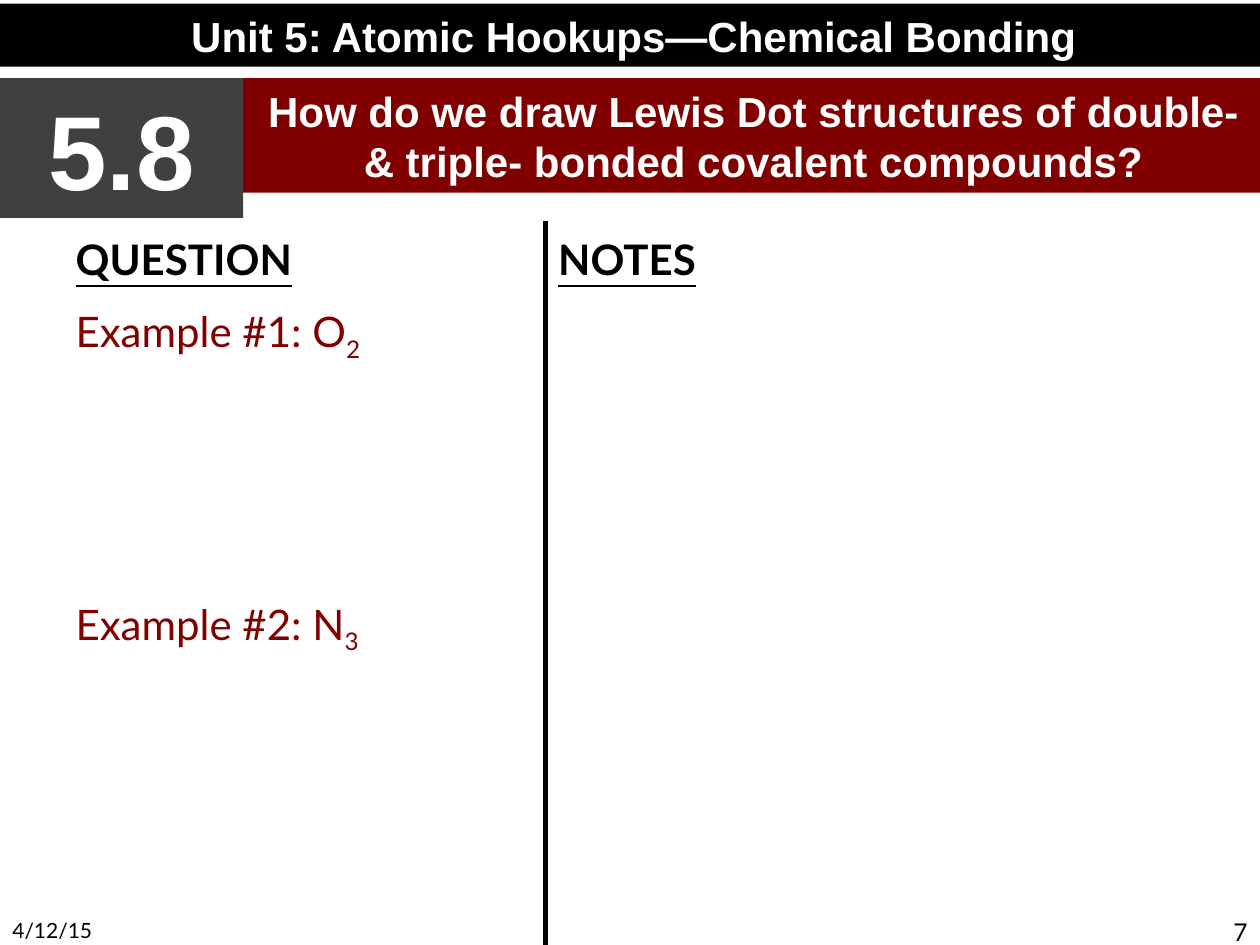
from dataclasses import dataclass

from lxml import etree
from pptx import Presentation
from pptx import util as u
from pptx.dml.color import RGBColor
from pptx.enum import shapes, text
from pptx.oxml.ns import qn


@dataclass(frozen=True)
class Theme:
    black: RGBColor = RGBColor(0x00, 0x00, 0x00)
    white: RGBColor = RGBColor(0xFF, 0xFF, 0xFF)
    gray: RGBColor = RGBColor(0x40, 0x40, 0x40)
    maroon: RGBColor = RGBColor(0x80, 0x00, 0x00)
    heading_font: str = "Arial"
    body_font: str = "Lato"
    number_size: int = 60
    main_size: int = 24
    page_size: int = 14
    date_size: int = 12


theme = Theme()


def add_run(paragraph, words, size, color, font=theme.body_font, bold=False):
    run = paragraph.add_run()
    run.text = words
    run.font.name = font
    run.font.size = u.Pt(size)
    run.font.bold = bold
    run.font.color.rgb = color
    return run


def place(part, left, top, width, height):
    part.left, part.top = u.Inches(left), u.Inches(top)
    part.width, part.height = u.Inches(width), u.Inches(height)


prs = Presentation()
prs.slide_width, prs.slide_height = u.Inches(10), u.Inches(7.5)
slide = prs.slides.add_slide(prs.slide_layouts[3])
lesson_question = slide.shapes.title
question_column, notes_column = slide.placeholders[1], slide.placeholders[2]

# Date and page number
for words, left, size, align in (
    ("4/12/15", 0, theme.date_size, text.PP_ALIGN.LEFT),
    ("7", 7.67, theme.page_size, text.PP_ALIGN.RIGHT),
):
    footer = slide.shapes.add_textbox(
        u.Inches(left), u.Inches(7.23), u.Inches(2.33), u.Inches(0.27))
    footer.text_frame.word_wrap = True
    line = footer.text_frame.paragraphs[0]
    line.alignment = align
    add_run(line, words, size, theme.black)

# Header bars: unit, lesson number and lesson question
unit_bar, lesson_number = (
    slide.shapes.add_shape(shapes.MSO_SHAPE.RECTANGLE, 0, 0, 0, 0) for _ in range(2))
for bar, box, fill, words, size in (
    (unit_bar, (0, 0.03, 10.06, 0.5), theme.black,
     "Unit 5: Atomic Hookups—Chemical Bonding", theme.main_size),
    (lesson_number, (0, 0.62, 1.93, 1.11), theme.gray, "5.8", theme.number_size),
    (lesson_question, (1.93, 0.62, 8.1, 0.91), theme.maroon,
     "How do we draw Lewis Dot structures of double- & triple- bonded covalent compounds?",
     theme.main_size),
):
    place(bar, *box)
    bar.fill.solid()
    bar.fill.fore_color.rgb = fill
    bar.line.fill.background()
    bar.shadow.inherit = False
    frame = bar.text_frame
    frame.word_wrap = True
    frame.auto_size = text.MSO_AUTO_SIZE.NONE
    frame.vertical_anchor = text.MSO_ANCHOR.MIDDLE
    line = frame.paragraphs[0]
    line.alignment = text.PP_ALIGN.CENTER
    add_run(line, words, size, theme.white, theme.heading_font, True)

# Column headings
for column, left, width, heading in (
    (question_column, 0.5, 3.92, "QUESTION"),
    (notes_column, 4.33, 5.67, "NOTES"),
):
    place(column, left, 1.8, width, 4.95)
    column.text_frame.auto_size = text.MSO_AUTO_SIZE.NONE
    line = column.text_frame.paragraphs[0]
    line.space_before = u.Pt(0)
    add_run(line, heading, theme.main_size, theme.black, bold=True).font.underline = True

# Examples, with working space left between them
for label, subscript, gap in (("Example #1: O", "2", 6), ("Example #2: N", "3", 128)):
    line = question_column.text_frame.add_paragraph()
    line.line_spacing = 1.2
    line.space_before = u.Pt(gap)
    add_run(line, label, theme.main_size, theme.maroon)
    lowered = add_run(line, subscript, theme.main_size, theme.maroon)
    lowered.font._element.set("baseline", "-25000")

# Both columns are unbulleted and flush left
for column in (question_column, notes_column):
    for line in column.text_frame.paragraphs:
        properties = line._p.get_or_add_pPr()
        properties.set("marL", "0")
        properties.set("indent", "0")
        etree.SubElement(properties, qn("a:buNone"))

# Divider between the columns
divider = slide.shapes.add_connector(
    shapes.MSO_CONNECTOR.STRAIGHT,
    u.Inches(4.33), u.Inches(1.75), u.Inches(4.33), u.Inches(7.5))
divider.line.color.rgb = theme.black
divider.line.width = u.Pt(3)
etree.SubElement(divider._element.spPr, qn("a:effectLst"))

prs.save("out.pptx")
